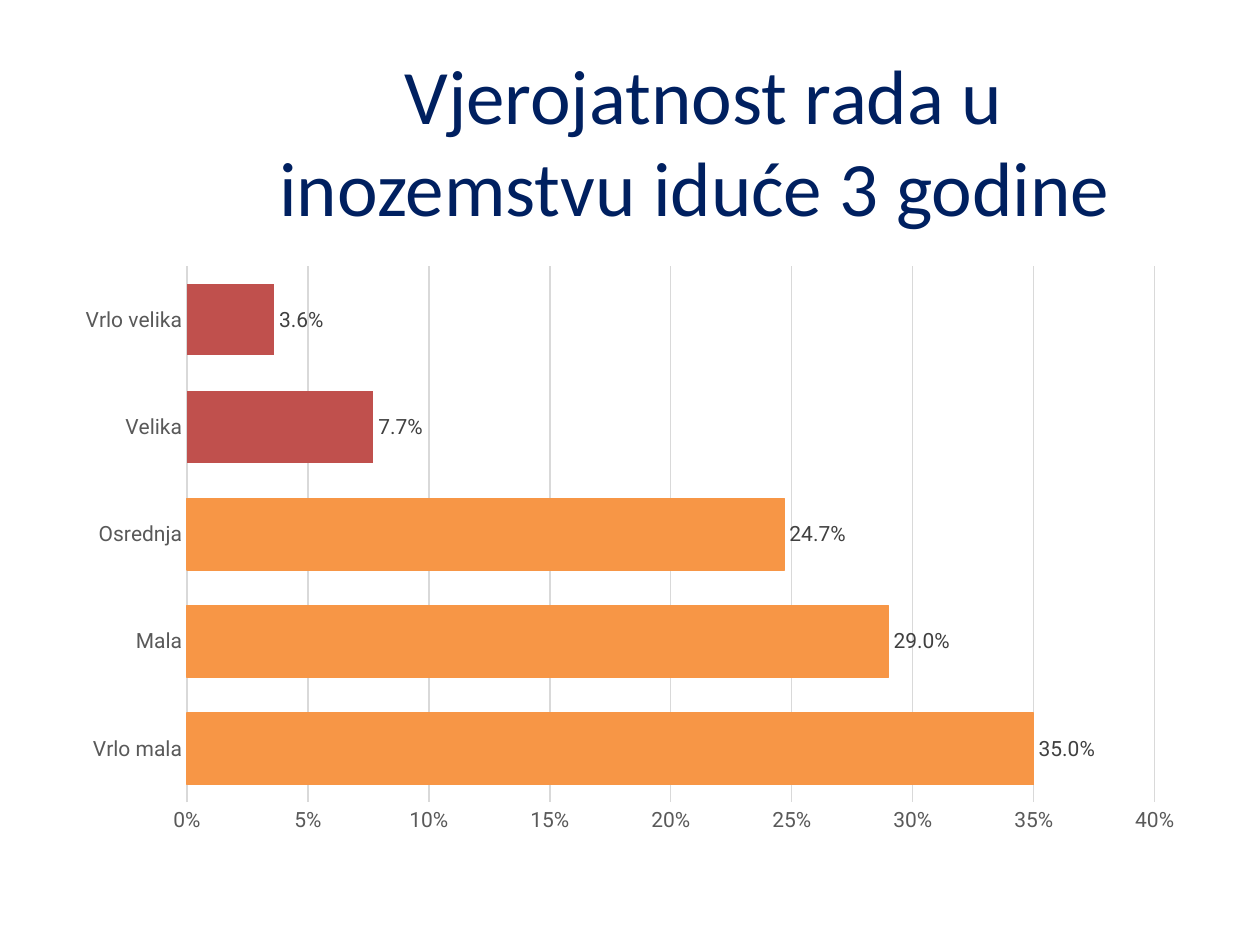
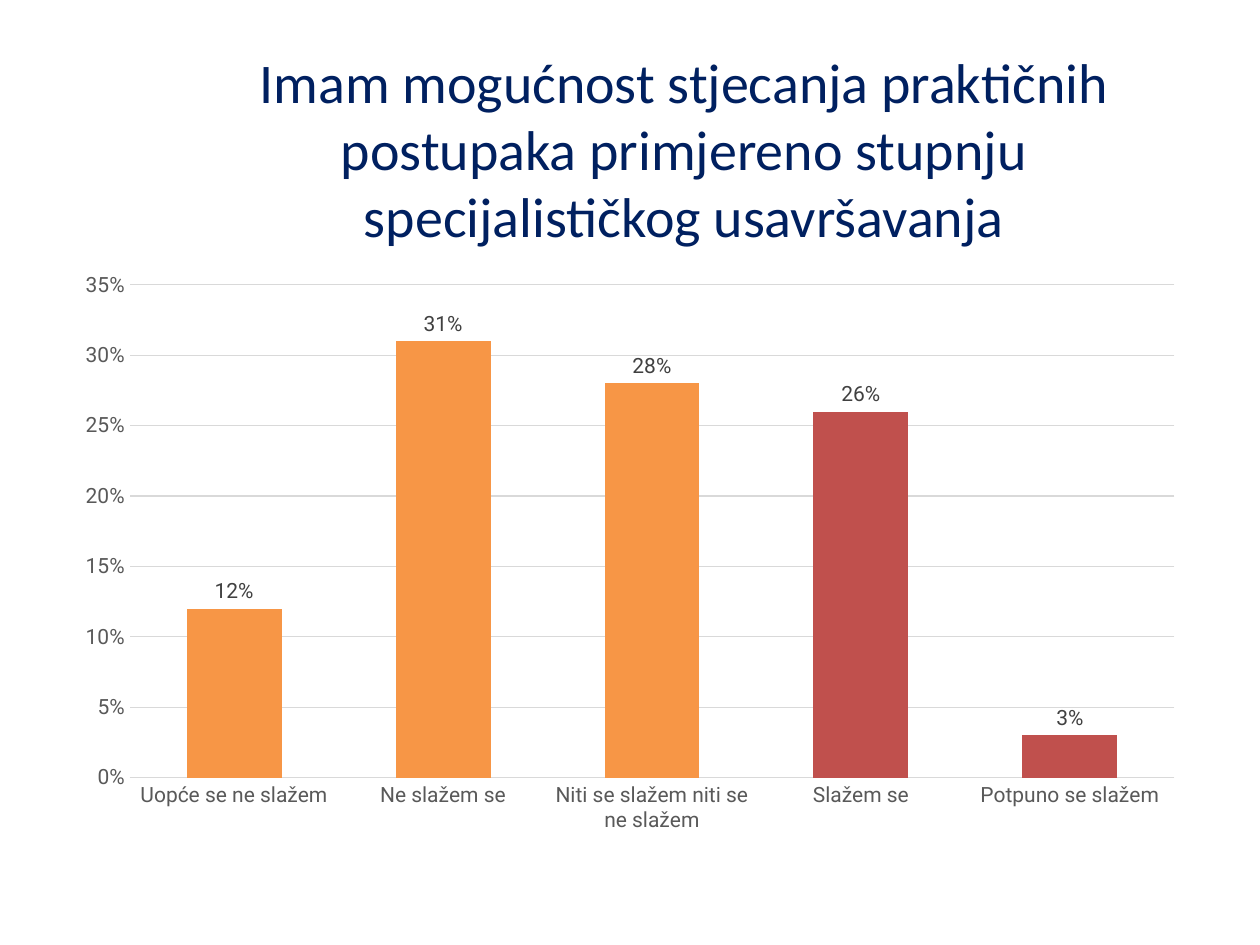
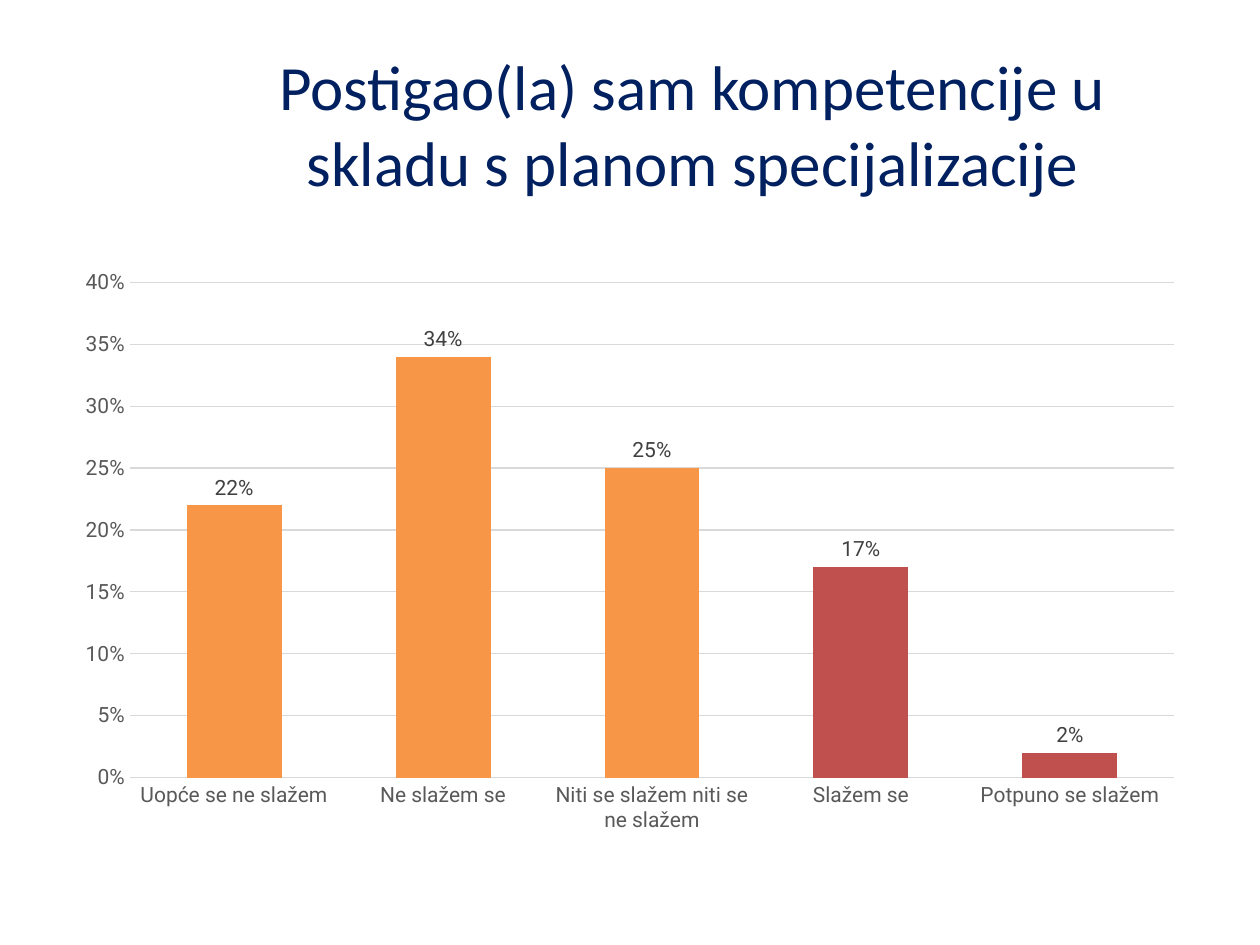
from pptx import Presentation
from pptx.chart.data import CategoryChartData
from pptx.dml.color import RGBColor
from pptx.enum.chart import XL_CHART_TYPE, XL_LABEL_POSITION, XL_TICK_MARK
from pptx.enum.text import MSO_ANCHOR, PP_ALIGN
from pptx.util import Pt

NAVY = RGBColor(0x00, 0x20, 0x60)
ORANGE = RGBColor(0xF7, 0x96, 0x46)
RED = RGBColor(0xC0, 0x50, 0x4D)
AXIS_GREY = RGBColor(0x59, 0x59, 0x59)
LABEL_GREY = RGBColor(0x40, 0x40, 0x40)
GRID_GREY = RGBColor(0xD9, 0xD9, 0xD9)
BLACK = RGBColor(0, 0, 0)

TITLE_FONT, CHART_FONT = "Calibri", "Roboto"
SLIDE_WIDTH, SLIDE_HEIGHT = 720, 540
TITLE_TOP, RIGHT_EDGE = 21.6, 684
CHART_LEFT, CHART_BOTTOM = 36, 482.4
HIGHLIGHTED = (3, 4)

LIKELIHOOD = ("Vrlo mala", "Mala", "Osrednja", "Velika", "Vrlo velika")
AGREEMENT = ("Uopće se ne slažem", "Ne slažem se",
             "Niti se slažem niti se ne slažem", "Slažem se",
             "Potpuno se slažem")

BAR_STYLE = {"kind": XL_CHART_TYPE.BAR_CLUSTERED, "gap": 50, "overlap": 0,
             "label_format": "0.0%", "outlined": True}
COLUMN_STYLE = {"kind": XL_CHART_TYPE.COLUMN_CLUSTERED, "gap": 120,
                "overlap": -27, "label_format": "0%", "outlined": False}

SLIDES = [
    {"title": {"text": "Vjerojatnost rada u inozemstvu iduće 3 godine ",
               "left": 120.2, "height": 116.6, "size": 44},
     "chart": {"top": 145.4, "style": BAR_STYLE, "categories": LIKELIHOOD,
               "values": (0.35, 0.29, 0.247, 0.077, 0.036), "maximum": 0.4}},
    {"title": {"text": "Imam mogućnost stjecanja praktičnih postupaka "
                       "primjereno stupnju specijalističkog usavršavanja",
               "left": 97.9, "height": 127.4, "size": 32},
     "chart": {"top": 149, "style": COLUMN_STYLE, "categories": AGREEMENT,
               "values": (0.12, 0.31, 0.28, 0.26, 0.03), "maximum": 0.35}},
    {"title": {"text": "Postigao(la) sam kompetencije u skladu s planom "
                       "specijalizacije",
               "left": 107.3, "height": 90, "size": 36},
     "chart": {"top": 147.6, "style": COLUMN_STYLE, "categories": AGREEMENT,
               "values": (0.22, 0.34, 0.25, 0.17, 0.02), "maximum": 0.4}},
]


def set_attributes(target, values):
    for name, value in values.items():
        setattr(target, name, value)


def set_font(font, name, size, color):
    set_attributes(font, {"name": name, "size": Pt(size)})
    font.color.rgb = color


def set_line(line, color):
    line.color.rgb = color
    line.width = Pt(0.75)


def set_fill(fill, color):
    fill.solid()
    fill.fore_color.rgb = color


def add_title(page, text, left, height, size):
    box = page.shapes.add_textbox(Pt(left), Pt(TITLE_TOP),
                                  Pt(RIGHT_EDGE - left), Pt(height))
    set_attributes(box.text_frame, {"word_wrap": True, "margin_top": Pt(5.5),
                                    "vertical_anchor": MSO_ANCHOR.TOP})
    para = box.text_frame.paragraphs[0]
    para.alignment = PP_ALIGN.CENTER
    span = para.add_run()
    span.text = text
    set_font(span.font, TITLE_FONT, size, NAVY)


def style_axes(chart, maximum):
    for axis in (chart.category_axis, chart.value_axis):
        set_attributes(axis, {"major_tick_mark": XL_TICK_MARK.NONE,
                              "minor_tick_mark": XL_TICK_MARK.NONE})
        set_font(axis.tick_labels.font, CHART_FONT, 12, AXIS_GREY)
    set_line(chart.category_axis.format.line, GRID_GREY)
    scale = chart.value_axis
    set_attributes(scale, {"minimum_scale": 0, "maximum_scale": maximum,
                           "major_unit": 0.05, "has_major_gridlines": True})
    set_attributes(scale.tick_labels, {"number_format": "0%",
                                       "number_format_is_linked": False})
    scale.format.line.fill.background()
    set_line(scale.major_gridlines.format.line, GRID_GREY)


def style_bars(plot, style):
    set_attributes(plot, {"gap_width": style["gap"], "overlap": style["overlap"],
                          "vary_by_categories": False})
    series = plot.series[0]
    series.invert_if_negative = False
    set_fill(series.format.fill, ORANGE)
    if style["outlined"]:
        set_line(series.format.line, ORANGE)
    for index in HIGHLIGHTED:
        set_fill(series.points[index].format.fill, RED)
    labels = series.data_labels
    set_attributes(labels, {"show_value": True,
                            "number_format": style["label_format"],
                            "number_format_is_linked": False,
                            "position": XL_LABEL_POSITION.OUTSIDE_END})
    set_font(labels.font, CHART_FONT, 12, LABEL_GREY)


def add_survey_chart(page, top, style, categories, values, maximum):
    chart_data = CategoryChartData(number_format="0.0%")
    chart_data.categories = categories
    chart_data.add_series("Series 1", values)
    chart = page.shapes.add_chart(
        style["kind"], Pt(CHART_LEFT), Pt(top), Pt(RIGHT_EDGE - CHART_LEFT),
        Pt(CHART_BOTTOM - top), chart_data).chart
    set_attributes(chart, {"has_title": False, "has_legend": False})
    set_font(chart.font, CHART_FONT, 12, BLACK)
    style_axes(chart, maximum)
    style_bars(chart.plots[0], style)


def main():
    deck = Presentation()
    set_attributes(deck, {"slide_width": Pt(SLIDE_WIDTH),
                          "slide_height": Pt(SLIDE_HEIGHT)})
    for content in SLIDES:
        page = deck.slides.add_slide(deck.slide_layouts[6])
        add_title(page, **content["title"])
        add_survey_chart(page, **content["chart"])
    deck.save("out.pptx")


if __name__ == "__main__":
    main()
